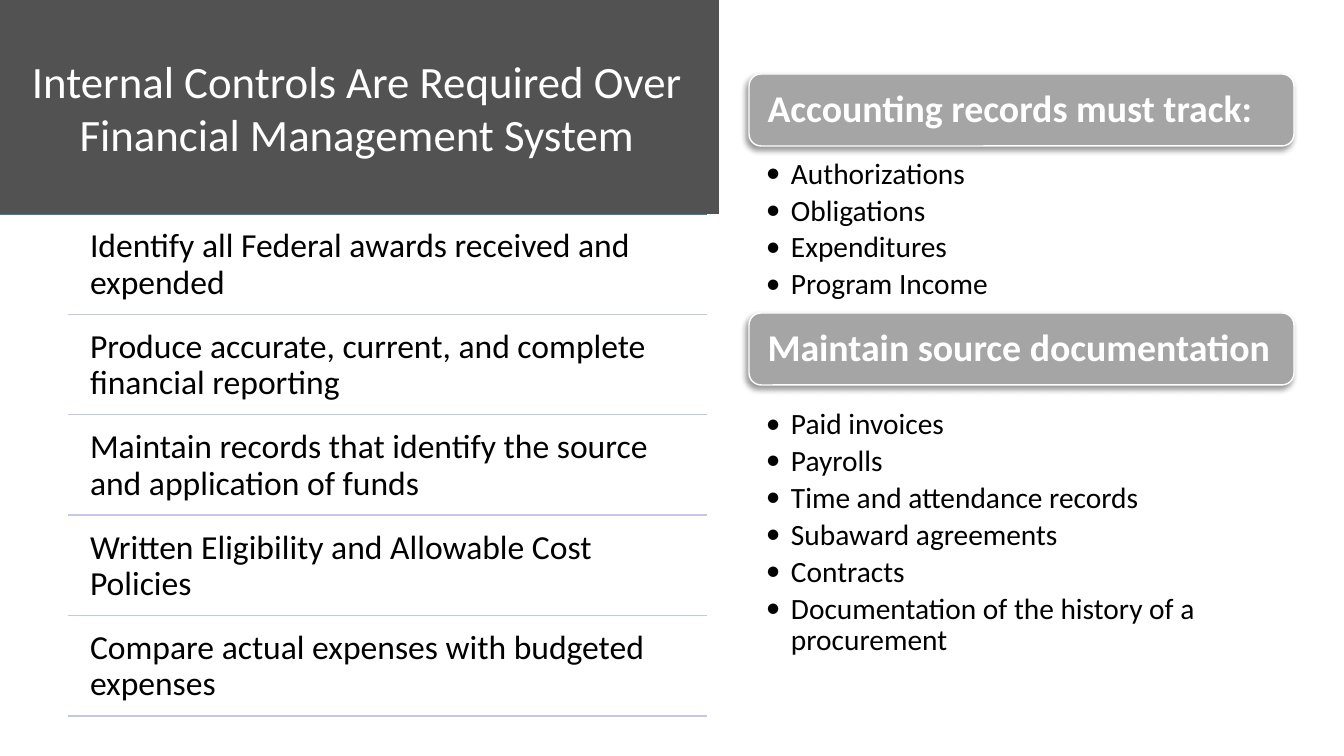
from lxml import etree
from pptx import Presentation
from pptx.dml import color
from pptx.enum import shapes, text
from pptx.oxml import ns
from pptx.util import Pt

HEAD = "Internal Controls Are Required Over Financial Management System"
RULES = [
    "Identify all Federal awards received and expended",
    "Produce accurate, current, and complete financial reporting",
    "Maintain records that identify the source and application of funds",
    "Written Eligibility and Allowable Cost Policies",
    "Compare actual expenses with budgeted expenses",
]
CARDS = [
    ("Accounting records must track:", 74, 168,
     ["Authorizations", "Obligations", "Expenditures", "Program Income"]),
    ("Maintain source documentation", 313, 296,
     ["Paid invoices", "Payrolls", "Time and attendance records",
      "Subaward agreements", "Contracts",
      "Documentation of the history of a procurement"]),
]
TOP, END = 214, 716
LEFT, RIGHT = 68, 707
CARD_X, CARD_W, CARD_H = 749, 545, 72
LEAD = {"line_spacing": 0.9, "space_before": Pt(0)}
ROW = {"size": 24, "hue": "000000", "after": 8, "pad": (10, 10, 10, 10)}
BAR = {"size": 27, "hue": "FFFFFF", "bold": True, "pad": (15, 11, 11, 11)}
LIST = {"size": 21, "hue": "000000", "after": 3.7, "pad": (17, 4, 21, 4),
        "bullet": True}
TITLE = {"size": 32, "hue": "FFFFFF", "align": text.PP_ALIGN.CENTER,
         "lead": 1.0, "pad": (10, 5, 10, 5)}


def px(n):
    return round(n * 12192000 / 1344)


def rgb(code):
    return color.RGBColor.from_string(code)


def place(shape, *box):
    for key, n in zip(("left", "top", "width", "height"), box):
        setattr(shape, key, px(n))


def add(up, tag, **keys):
    return etree.SubElement(up, ns.qn("a:" + tag), keys)


def write(shape, lines, style, anchor=text.MSO_ANCHOR.MIDDLE):
    frame = shape.text_frame
    frame.text = "\n".join(lines)
    frame.word_wrap = True
    frame.auto_size = text.MSO_AUTO_SIZE.NONE
    frame.vertical_anchor = anchor
    for side, n in zip(("left", "top", "right", "bottom"), style["pad"]):
        setattr(frame, "margin_" + side, px(n))
    for para in frame.paragraphs:
        for key, val in LEAD.items():
            setattr(para, key, val)
        para.line_spacing = style.get("lead", 0.9)
        para.space_after = Pt(style.get("after", 0))
        para.alignment = style.get("align", text.PP_ALIGN.LEFT)
        if style.get("bullet"):
            props = para._p.get_or_add_pPr()
            props.set("marL", str(px(25)))
            props.set("indent", str(px(-25)))
            add(props, "buFont", typeface="Calibri")
            add(props, "buChar", char="•")
        look = {"name": "Calibri", "size": Pt(style["size"]),
                "bold": style.get("bold", False)}
        for key, val in look.items():
            setattr(para.font, key, val)
        para.font.color.rgb = rgb(style["hue"])


def rule(slide, x, y, hue):
    line = slide.shapes.add_connector(
        shapes.MSO_CONNECTOR.STRAIGHT, px(x), px(y), px(RIGHT), px(y))
    line.line.color.rgb = rgb(hue)
    line.line.width = Pt(1)
    add(line.element.spPr, "effectLst")


def card(slide, name, y):
    bar = slide.shapes.add_shape(
        shapes.MSO_SHAPE.ROUNDED_RECTANGLE,
        px(CARD_X), px(y), px(CARD_W), px(CARD_H))
    bar.fill.solid()
    bar.fill.fore_color.rgb = rgb("A5A5A5")
    bar.line.color.rgb = rgb("FFFFFF")
    bar.line.width = Pt(1)
    bar.shadow.inherit = False
    glow = add(bar.element.spPr.find(ns.qn("a:effectLst")), "outerShdw",
               blurRad=str(Pt(4)), dist=str(Pt(3)), dir="8100000",
               algn="tl", rotWithShape="0")
    add(add(glow, "srgbClr", val="000000"), "alpha", val="40000")
    write(bar, [name], BAR)


def main():
    deck = Presentation()
    deck.slide_width, deck.slide_height = px(1344), px(756)
    slide = deck.slides.add_slide(deck.slide_layouts[3])
    title, *bodies = slide.placeholders

    step = (END - TOP) / len(RULES)
    rule(slide, 0, TOP, "4472C4")
    for i, line in enumerate(RULES):
        y = TOP + i * step
        box = slide.shapes.add_textbox(
            px(80), px(y + 5), px(RIGHT - 80), px(step - 5))
        write(box, [line], ROW, text.MSO_ANCHOR.TOP)
        rule(slide, LEFT, y + step, "C1C9E4")

    for body, (name, y, high, items) in zip(bodies, CARDS):
        card(slide, name, y)
        place(body, CARD_X, y + CARD_H, CARD_W, high)
        write(body, items, LIST)

    place(title, -5, 0, 724, TOP)
    title.fill.solid()
    title.fill.fore_color.rgb = rgb("525252")
    write(title, [HEAD], TITLE)
    slide.shapes.element.append(title.element)
    deck.save("out.pptx")


if __name__ == "__main__":
    main()
